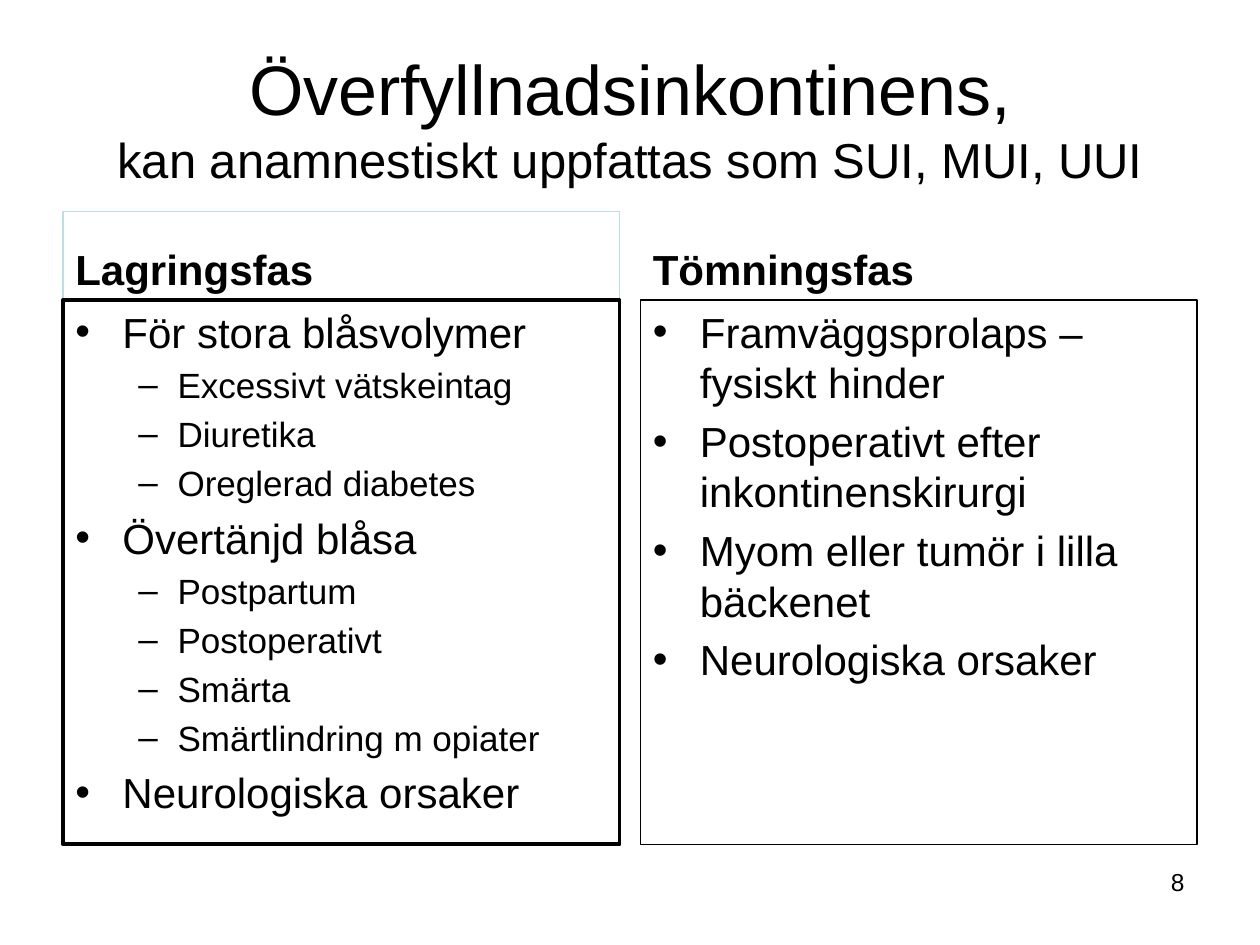
from lxml.etree import SubElement
from pptx import Presentation
from pptx.dml.color import RGBColor
from pptx.enum.text import MSO_ANCHOR as Anchor, PP_ALIGN as Align
from pptx.oxml.ns import qn
from pptx.util import Cm, Pt

# Content
TITLE = "Överfyllnadsinkontinens,"
SUBTITLE = "kan anamnestiskt uppfattas som SUI, MUI, UUI"
PAGE_NUMBER = "8"
PHASES = [
    {
        "heading": "Lagringsfas",
        "heading_line": ("BBE0E3", 0.75),
        "list_line": ("000000", 2.25),
        "causes": [
            (0, "För stora blåsvolymer"),
            (1, "Excessivt vätskeintag"),
            (1, "Diuretika"),
            (1, "Oreglerad diabetes"),
            (0, "Övertänjd blåsa"),
            (1, "Postpartum"),
            (1, "Postoperativt"),
            (1, "Smärta"),
            (1, "Smärtlindring m opiater"),
            (0, "Neurologiska orsaker"),
        ],
    },
    {
        "heading": "Tömningsfas",
        "heading_line": None,
        "list_line": ("000000", 0.75),
        "causes": [
            (0, "Framväggsprolaps – fysiskt hinder"),
            (0, "Postoperativt efter inkontinenskirurgi"),
            (0, "Myom eller tumör i lilla bäckenet"),
            (0, "Neurologiska orsaker"),
        ],
    },
]

# Bullet levels: character, font size, left indent and hanging indent in cm
LEVELS = [("•", 24, 0.95, 0.95), ("–", 20, 2.06, 0.79)]

# Layout in cm
MARGIN, CONTENT_WIDTH = 1.27, 22.86
COLUMN_WIDTH = 11.22
COLUMN_STEP = CONTENT_WIDTH - COLUMN_WIDTH
HEADING_TOP, HEADING_HEIGHT = 4.27, 1.78
LIST_TOP, LIST_HEIGHT = HEADING_TOP + HEADING_HEIGHT, 10.97


def color(hex_string):
    return RGBColor.from_string(hex_string)


def set_font(font, size, bold=False):
    font.name, font.size, font.bold = "Arial", Pt(size), bold
    font.color.rgb = color("000000")


def add_box(left, top, width, height, anchor=Anchor.TOP, line=None):
    box = slide.shapes.add_textbox(Cm(left), Cm(top), Cm(width), Cm(height))
    box.text_frame.word_wrap = True
    box.text_frame.vertical_anchor = anchor
    if line:
        box.line.color.rgb = color(line[0])
        box.line.width = Pt(line[1])
    return box.text_frame


def space_before(paragraph):
    """Space of 20 % of the line above the paragraph."""
    spacing = SubElement(paragraph._p.get_or_add_pPr(), qn("a:spcBef"))
    SubElement(spacing, qn("a:spcPct")).set("val", "20000")


def add_bullet(paragraph, level):
    character, size, indent, hanging = LEVELS[level]
    paragraph.level = level
    set_font(paragraph.font, size)
    props = paragraph._p.get_or_add_pPr()
    props.set("marL", str(Cm(indent)))
    props.set("indent", str(-Cm(hanging)))
    bullet_font = props.makeelement(qn("a:buFont"), {"typeface": "Arial"})
    bullet = props.makeelement(qn("a:buChar"), {"char": character})
    defaults = props.find(qn("a:defRPr"))
    for part in (bullet_font, bullet):
        defaults.addprevious(part)


prs = Presentation()
prs.slide_width, prs.slide_height = Cm(25.4), Cm(19.05)
slide = prs.slides.add_slide(prs.slide_layouts[6])

# Title in two sizes
title = add_box(MARGIN, 0.76, CONTENT_WIDTH, 3.18, Anchor.MIDDLE).paragraphs[0]
title.alignment = Align.CENTER
main_title = title.add_run()
main_title.text = TITLE
set_font(main_title.font, 40)
title.add_line_break()
subtitle = title.add_run()
subtitle.text = SUBTITLE
set_font(subtitle.font, 28)

# One column per phase: heading above a bulleted list
for column, phase in enumerate(PHASES):
    left = MARGIN + column * COLUMN_STEP
    heading = add_box(left, HEADING_TOP, COLUMN_WIDTH, HEADING_HEIGHT,
                      Anchor.BOTTOM, phase["heading_line"]).paragraphs[0]
    heading.text = phase["heading"]
    space_before(heading)
    set_font(heading.font, 24, bold=True)

    causes = add_box(left, LIST_TOP, COLUMN_WIDTH, LIST_HEIGHT,
                     line=phase["list_line"])
    for index, (level, text) in enumerate(phase["causes"]):
        cause = causes.add_paragraph() if index else causes.paragraphs[0]
        cause.text = text
        space_before(cause)
        add_bullet(cause, level)

# Page number
number = add_box(18.2, 17.35, 5.93, 1.32).paragraphs[0]
number.text = PAGE_NUMBER
number.alignment = Align.RIGHT
set_font(number.font, 14)

prs.save("out.pptx")
